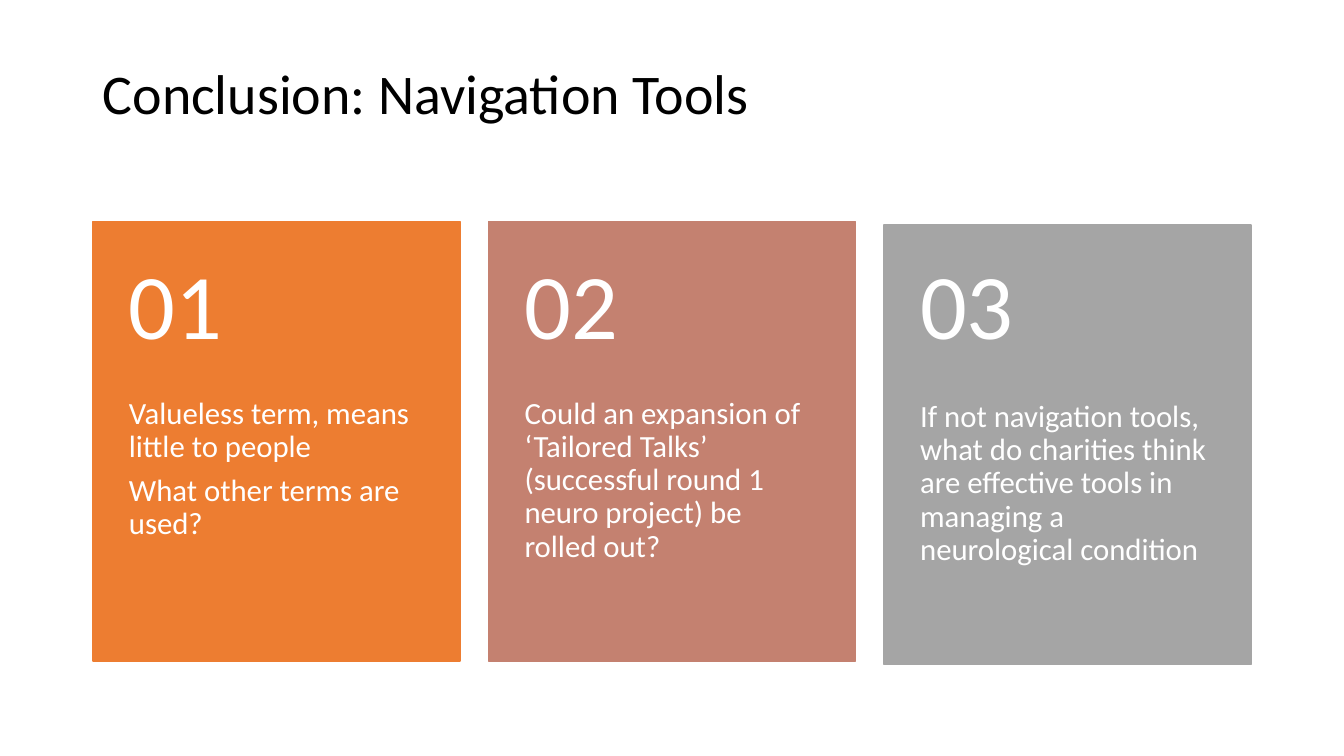
from pptx import Presentation
from pptx.dml.color import RGBColor
from pptx.enum.shapes import MSO_SHAPE
from pptx.enum.text import MSO_ANCHOR, PP_ALIGN
from pptx.util import Cm, Pt

RECTANGLE = MSO_SHAPE.RECTANGLE
TOP, MIDDLE = MSO_ANCHOR.TOP, MSO_ANCHOR.MIDDLE
LEFT = PP_ALIGN.LEFT

BLACK = RGBColor(0x00, 0x00, 0x00)
WHITE = RGBColor(0xFF, 0xFF, 0xFF)
ORANGE = RGBColor(0xED, 0x7D, 0x31)
ROSE = RGBColor(0xC4, 0x81, 0x70)
GRAY = RGBColor(0xA5, 0xA5, 0xA5)
FONT = "Calibri"

MARGIN = Cm(2.34)
CARD_TOP = Cm(5.59)
CARD_WIDTH = Cm(9.25)
CARD_HEIGHT = Cm(11.07)
CARD_PITCH = Cm(9.97)
NUMBER_HEIGHT = Cm(4.43)
PADDING = Cm(0.91)

CARDS = [
    (ORANGE, Cm(0), "Valueless term, means little to people\nWhat other terms are used?"),
    (ROSE, Cm(0), "Could an expansion of ‘Tailored Talks’ "
                  "(successful round 1 neuro project) be rolled out?"),
    (GRAY, Cm(0.08), "If not navigation tools, what do charities think "
                     "are effective tools in managing a neurological condition"),
]


def add_text(slide, box, text, size, color, anchor, insets, space_after=0):
    text_frame = slide.shapes.add_textbox(*box).text_frame
    text_frame.word_wrap = True
    text_frame.vertical_anchor = anchor
    (text_frame.margin_left, text_frame.margin_top,
     text_frame.margin_right, text_frame.margin_bottom) = insets
    text_frame.text = text
    for paragraph in text_frame.paragraphs:
        paragraph.alignment = LEFT
        paragraph.line_spacing = 0.9
        paragraph.space_after = Pt(space_after)
        for run in paragraph.runs:
            run.font.name = FONT
            run.font.size = Pt(size)
            run.font.color.rgb = color


def add_title(slide, box):
    insets = (Cm(0.25), Cm(0.13), Cm(0.25), Cm(0.13))
    add_text(slide, box, "Conclusion: Navigation Tools", 40, BLACK, MIDDLE, insets)


def add_card(slide, box, number, color, drop, text):
    left, top, width, height = box
    panel = slide.shapes.add_shape(RECTANGLE, left, top + drop, width, height)
    panel.shadow.inherit = False
    panel.fill.solid()
    panel.fill.fore_color.rgb = color
    panel.line.color.rgb = color
    panel.line.width = Pt(1)

    body_box = (left, top + drop + NUMBER_HEIGHT, width, height - NUMBER_HEIGHT)
    add_text(slide, body_box, text, 22, WHITE, TOP,
             (PADDING, Cm(0), PADDING, PADDING), space_after=7.7)
    add_text(slide, (left, top, width, NUMBER_HEIGHT), f"{number:02d}", 66, WHITE, MIDDLE,
             (PADDING, Cm(0.46), PADDING, Cm(0.46)))


def add_cards(slide, box):
    left, top, width, height = box
    for index, (color, drop, text) in enumerate(CARDS):
        card_box = (left + index * CARD_PITCH, top, width, height)
        add_card(slide, card_box, index + 1, color, drop, text)


def main():
    presentation = Presentation()
    presentation.slide_width = Cm(33.87)
    presentation.slide_height = Cm(19.05)
    slide = presentation.slides.add_slide(presentation.slide_layouts[6])
    add_title(slide, (MARGIN, Cm(0.94), Cm(29.18), Cm(3)))
    add_cards(slide, (MARGIN, CARD_TOP, CARD_WIDTH, CARD_HEIGHT))
    presentation.save("out.pptx")


if __name__ == "__main__":
    main()
